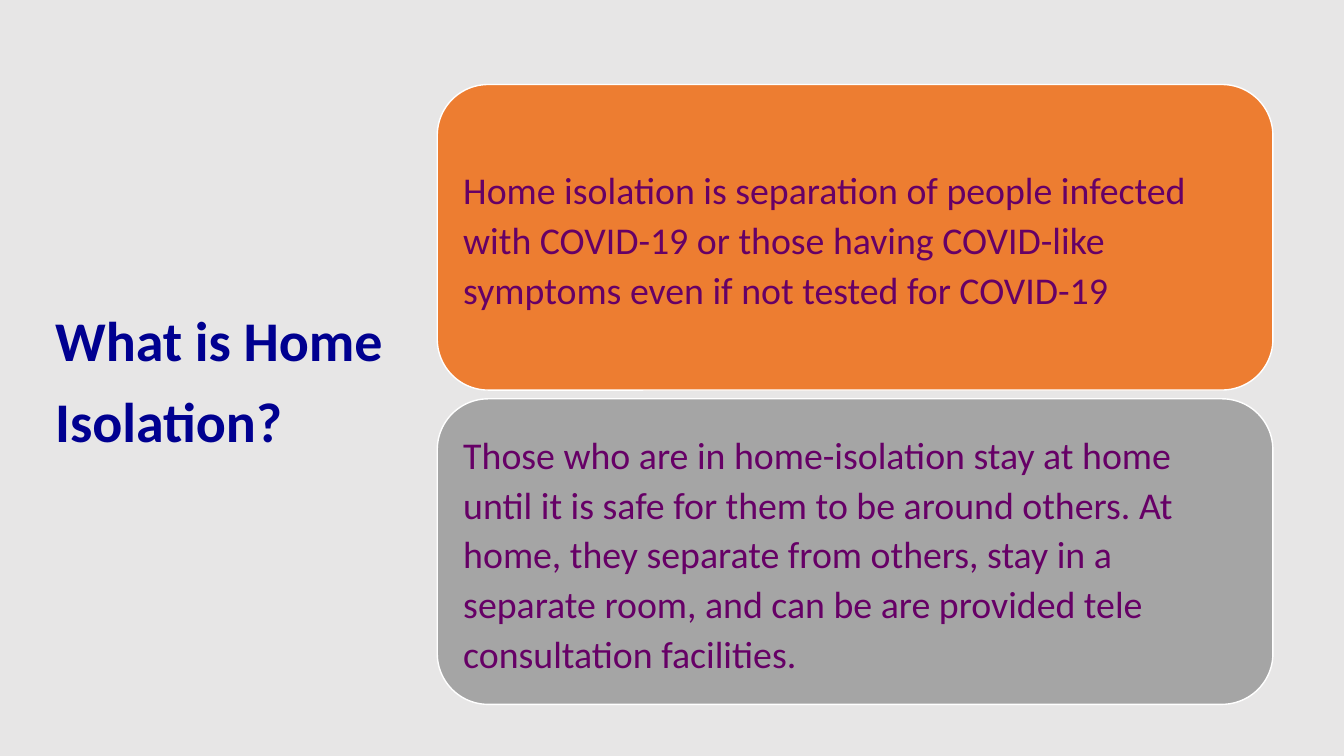
from dataclasses import dataclass

from pptx import Presentation
from pptx.dml.color import RGBColor
from pptx.enum import shapes, text
from pptx.util import Cm, Pt


@dataclass(frozen=True)
class Theme:
    font: str = "Calibri"
    background: str = "E7E6E6"
    title: str = "000090"
    body: str = "660066"
    outline: str = "FFFFFF"
    title_size: int = 40
    body_size: int = 27


THEME = Theme()

CARDS = [
    ("ED7D31", "Home isolation is separation of people infected with COVID-19 "
               "or those having COVID-like symptoms even if not tested for COVID-19"),
    ("A5A5A5", "Those who are in home-isolation stay at home until it is safe for "
               "them to be around others. At home, they separate from others, stay "
               "in a separate room, and can be are provided tele consultation "
               "facilities."),
]
CARD_LEFT, CARD_TOP = 11.02, 2.13
CARD_WIDTH, CARD_HEIGHT, CARD_GAP = 21.06, 7.7, 0.22


def apply_format(target, values):
    for name, value in values.items():
        setattr(target, name, value)


def write_text(box, words, size, color, spacing, inset, bold=False):
    """Fill a box with one left-aligned, vertically centred paragraph."""
    frame = box.text_frame
    apply_format(frame, {
        "word_wrap": True,
        "auto_size": text.MSO_AUTO_SIZE.NONE,
        "vertical_anchor": text.MSO_ANCHOR.MIDDLE,
        **{f"margin_{side}": Cm(inset)
           for side in ("left", "top", "right", "bottom")},
    })
    para = frame.paragraphs[0]
    apply_format(para, {"alignment": text.PP_ALIGN.LEFT, "line_spacing": spacing})
    span = para.add_run()
    span.text = words
    apply_format(span.font, {"name": THEME.font, "size": Pt(size), "bold": bold})
    span.font.color.rgb = RGBColor.from_string(color)


def add_title(page, words):
    box = page.shapes.add_textbox(Cm(1.14), Cm(1.75), Cm(8.97), Cm(15.29))
    write_text(box, words, THEME.title_size, THEME.title, 1.2, 0.25, bold=True)


def add_card(page, top, fill, words):
    box = page.shapes.add_shape(
        shapes.MSO_SHAPE.ROUNDED_RECTANGLE,
        Cm(CARD_LEFT), Cm(top), Cm(CARD_WIDTH), Cm(CARD_HEIGHT))
    box.shadow.inherit = False
    box.fill.solid()
    box.fill.fore_color.rgb = RGBColor.from_string(fill)
    box.line.color.rgb = RGBColor.from_string(THEME.outline)
    box.line.width = Pt(1)
    write_text(box, words, THEME.body_size, THEME.body, 1.1, 0.28)


def main():
    deck = Presentation()
    apply_format(deck, {"slide_width": Cm(33.87), "slide_height": Cm(19.05)})
    page = deck.slides.add_slide(deck.slide_layouts[6])
    page.background.fill.solid()
    page.background.fill.fore_color.rgb = RGBColor.from_string(THEME.background)

    add_title(page, "What is Home Isolation?")
    for row, (fill, words) in enumerate(CARDS):
        add_card(page, CARD_TOP + row * (CARD_HEIGHT + CARD_GAP), fill, words)
    deck.save("out.pptx")


if __name__ == "__main__":
    main()
